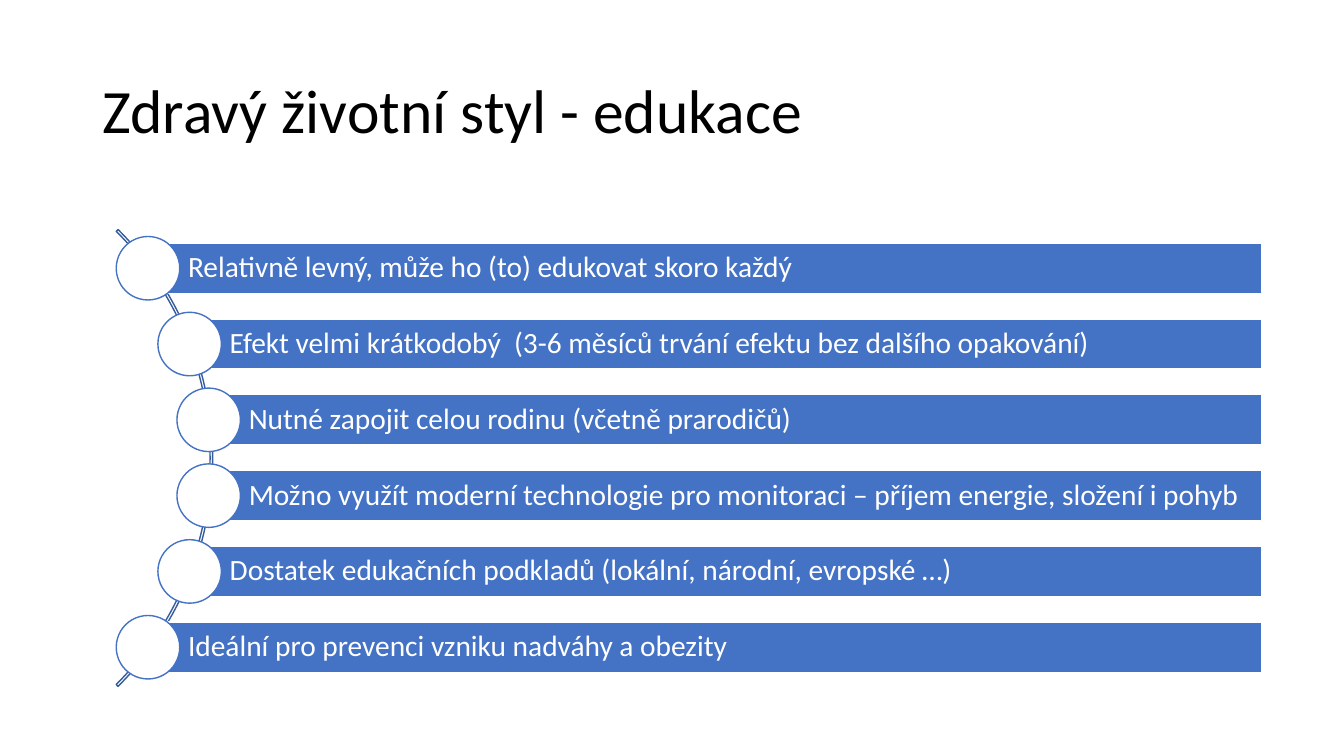
from dataclasses import dataclass

from pptx import Presentation
from pptx.dml.color import RGBColor
from pptx.enum.shapes import MSO_SHAPE
from pptx.enum.text import MSO_ANCHOR, PP_ALIGN
from pptx.shapes.autoshape import Shape
from pptx.slide import Slide
from pptx.text.text import TextFrame
from pptx.util import Cm, Pt


@dataclass(frozen=True)
class Theme:
    font: str = "Calibri"
    title: int = 44
    body: int = 21
    line: int = 1
    black: RGBColor = RGBColor(0, 0, 0)
    white: RGBColor = RGBColor(255, 255, 255)
    blue: RGBColor = RGBColor(0x44, 0x72, 0xC4)
    navy: RGBColor = RGBColor(0x36, 0x5B, 0x9D)


@dataclass(frozen=True)
class Item:
    left: float
    text: str


THEME = Theme()
OUTER, MIDDLE, INNER = 3.73, 4.78, 5.26
ITEMS = [
    Item(OUTER, "Relativně levný, může ho (to) edukovat skoro každý"),
    Item(MIDDLE, "Efekt velmi krátkodobý  (3-6 měsíců trvání efektu bez dalšího opakování)"),
    Item(INNER, "Nutné zapojit celou rodinu (včetně prarodičů)"),
    Item(INNER, "Možno využít moderní technologie pro monitoraci – příjem energie, složení i pohyb"),
    Item(MIDDLE, "Dostatek edukačních podkladů (lokální, národní, evropské …)"),
    Item(OUTER, "Ideální pro prevenci vzniku nadváhy a obezity"),
]
RIGHT = 31.8
FIRST = 6.76  # middle of the first bar
PITCH = 1.91
BAR = 1.27
DOT = 1.6


def write(frame: TextFrame, text: str, size: int, color: RGBColor) -> None:
    frame.word_wrap = True
    frame.vertical_anchor = MSO_ANCHOR.MIDDLE
    para = frame.paragraphs[0]
    para.text = text
    para.alignment = PP_ALIGN.LEFT
    para.line_spacing = 0.9
    para.font.name = THEME.font
    para.font.size = Pt(size)
    para.font.color.rgb = color


def outline(slide: Slide, kind: MSO_SHAPE, left: float, top: float,
            width: float, height: float, color: RGBColor) -> Shape:
    """Add an unfilled preset shape; lengths are in centimetres."""
    shape = slide.shapes.add_shape(kind, Cm(left), Cm(top), Cm(width), Cm(height))
    shape.shadow.inherit = False
    shape.fill.background()
    shape.line.color.rgb = color
    shape.line.width = Pt(THEME.line)
    return shape


def paint(shape: Shape, color: RGBColor) -> None:
    shape.fill.solid()
    shape.fill.fore_color.rgb = color


def add_title(slide: Slide, text: str) -> None:
    box = slide.shapes.add_textbox(Cm(2.33), Cm(1.01), Cm(29.21), Cm(3.68))
    write(box.text_frame, text, THEME.title, THEME.black)


def add_arc(slide: Slide) -> None:
    arc = outline(slide, MSO_SHAPE.BLOCK_ARC, -10.92, 3.4, 16.28, 16.28, THEME.navy)
    for index, value in enumerate((189, 27, 0.004)):
        arc.adjustments[index] = value


def add_item(slide: Slide, item: Item, middle: float) -> None:
    """Add a bar and the dot centred on its left edge."""
    bar = outline(slide, MSO_SHAPE.RECTANGLE, item.left, middle - BAR / 2,
                  RIGHT - item.left, BAR, THEME.white)
    paint(bar, THEME.blue)
    frame = bar.text_frame
    frame.margin_left = Cm(1.01)
    frame.margin_top = frame.margin_right = frame.margin_bottom = Cm(0.15)
    write(frame, item.text, THEME.body, THEME.white)
    dot = outline(slide, MSO_SHAPE.OVAL, item.left - DOT / 2, middle - DOT / 2,
                  DOT, DOT, THEME.blue)
    paint(dot, THEME.white)


def main() -> None:
    deck = Presentation()
    deck.slide_width, deck.slide_height = Cm(33.87), Cm(19.05)
    slide = deck.slides.add_slide(deck.slide_layouts[6])
    add_title(slide, "Zdravý životní styl - edukace")
    add_arc(slide)
    for row, item in enumerate(ITEMS):
        add_item(slide, item, FIRST + row * PITCH)
    deck.save("out.pptx")


if __name__ == "__main__":
    main()
